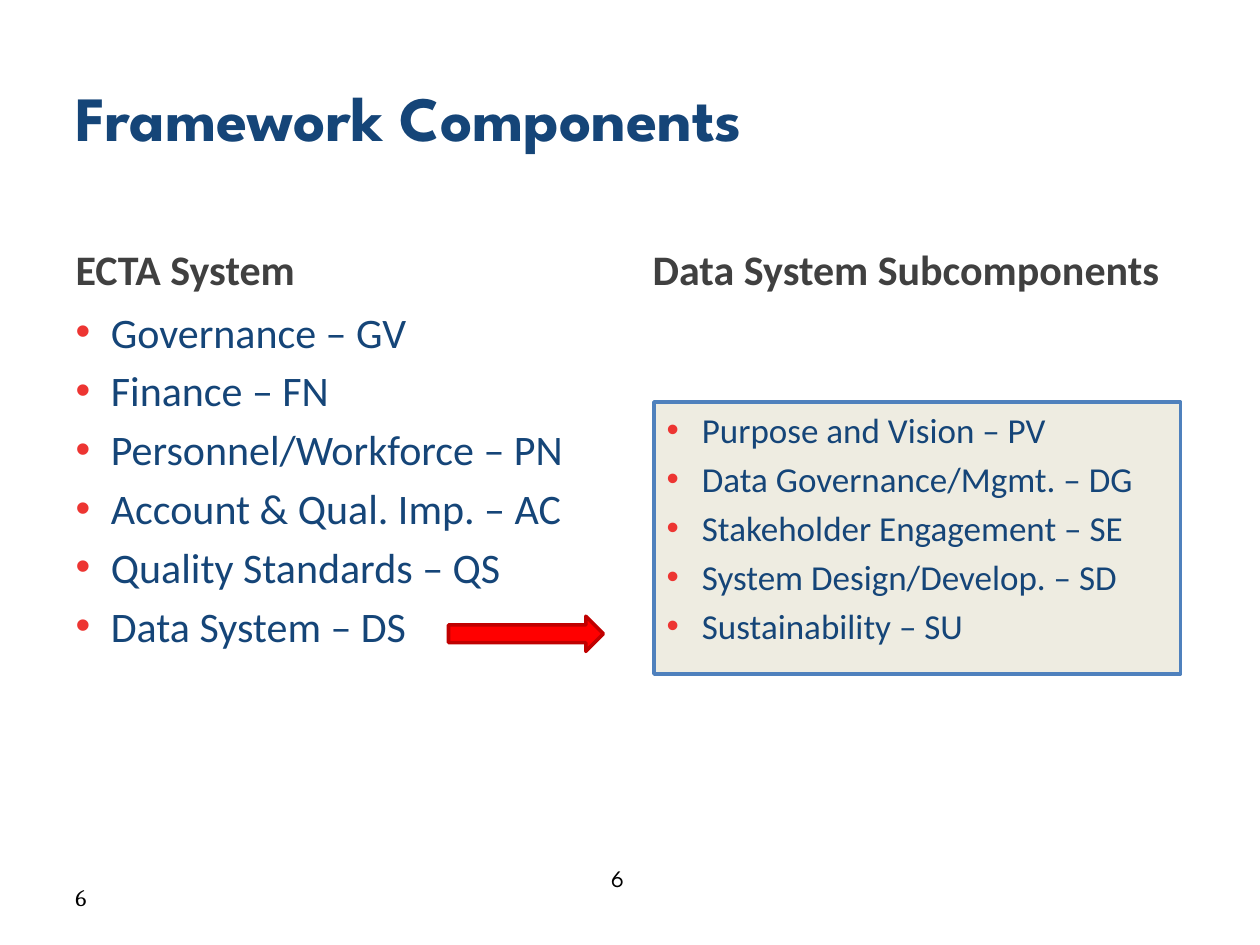
from pptx import Presentation
from pptx.dml.color import RGBColor
from pptx.enum.shapes import MSO_SHAPE
from pptx.enum.text import MSO_ANCHOR as ANCHOR, MSO_AUTO_SIZE, PP_ALIGN
from pptx.oxml.ns import qn
from pptx.util import Inches, Pt
from lxml.etree import SubElement

NAVY, GRAY, RED = "154578", "404040", "ED3532"
TITLE = "Framework Components"
COLUMNS = [
    {"heading": "ECTA System", "left": 0.5,
     "box": (0.5, 2.38, 4.43, 3.12), "size": 24, "fill": "FFFFFF", "line": None,
     "items": ["Governance – GV", "Finance – FN", "Personnel/Workforce – PN",
               "Account & Qual. Imp. – AC", "Quality Standards – QS",
               "Data System – DS"]},
    {"heading": "Data System Subcomponents", "left": 5.08,
     "box": (5.19, 3.19, 4.18, 2.16), "size": 20, "fill": "EEECE1", "line": "4F81BD",
     "items": ["Purpose and Vision – PV", "Data Governance/Mgmt. – DG",
               "Stakeholder Engagement – SE", "System Design/Develop. – SD",
               "Sustainability – SU"]},
]
PAGE_NUMBERS = [  # left, top, font, side inset
    (4.78, 6.77, "League Spartan", 0.07),
    (0.5, 6.92, "Cambria", 0.1),
]


def rgb(value):
    return RGBColor.from_string(value)


def place(sp, box):
    sp.left, sp.top, sp.width, sp.height = map(Inches, box)


def paint(sp, fill, line):
    sp.fill.solid()
    sp.fill.fore_color.rgb = rgb(fill)
    if line:
        sp.line.color.rgb = rgb(line)
        sp.line.width = Pt(2)
    else:
        sp.line.fill.background()


def add_bullet(p):
    pPr = p._p.get_or_add_pPr()
    pPr.set("marL", str(Inches(0.28)))
    pPr.set("indent", str(-Inches(0.28)))
    color = SubElement(pPr, qn("a:buClr"))
    SubElement(color, qn("a:srgbClr"), val=RED)
    SubElement(pPr, qn("a:buFont"), typeface="Arial")
    SubElement(pPr, qn("a:buChar"), char="•")


def write(sp, lines, size, color, font="Calibri", bold=False,
          anchor=ANCHOR.TOP, bullets=False):
    tf = sp.text_frame
    tf.word_wrap = True
    tf.auto_size = MSO_AUTO_SIZE.NONE
    tf.vertical_anchor = anchor
    for i, line in enumerate(lines):
        p = tf.add_paragraph() if i else tf.paragraphs[0]
        p.alignment = PP_ALIGN.LEFT
        p.space_before = Pt(size * 0.2 if i else 0)
        if bullets:
            add_bullet(p)
        r = p.add_run()
        r.text = line
        r.font.name, r.font.size, r.font.bold = font, Pt(size), bold
        r.font.color.rgb = rgb(color)


prs = Presentation()
prs.slide_width, prs.slide_height = Inches(10), Inches(7.5)
s = prs.slides.add_slide(prs.slide_layouts.get_by_name("Comparison"))
title, *bodies = s.placeholders

place(title, (0.5, 0.3, 9, 1.25))
write(title, [TITLE], 36, NAVY, "League Spartan", True, ANCHOR.MIDDLE)

for column, heading, body in zip(COLUMNS, bodies[::2], bodies[1::2]):
    place(heading, (column["left"], 1.68, 4.42, 0.7))
    write(heading, [column["heading"]], 24, GRAY, bold=True, anchor=ANCHOR.BOTTOM)
    place(body, column["box"])
    paint(body, column["fill"], column["line"])
    write(body, column["items"], column["size"], NAVY, bullets=True)

for left, top, font, inset in PAGE_NUMBERS:
    number = s.shapes.add_textbox(*map(Inches, (left, top, 2.33, 0.4)))
    number.text_frame.margin_left = number.text_frame.margin_right = Inches(inset)
    write(number, ["6"], 13.5, "000000", font, anchor=ANCHOR.MIDDLE)

arrow = s.shapes.add_shape(MSO_SHAPE.RIGHT_ARROW, *map(Inches, (3.56, 4.89, 1.23, 0.28)))
arrow.shadow.inherit = False
paint(arrow, "FF0000", "C00000")

prs.save("out.pptx")
